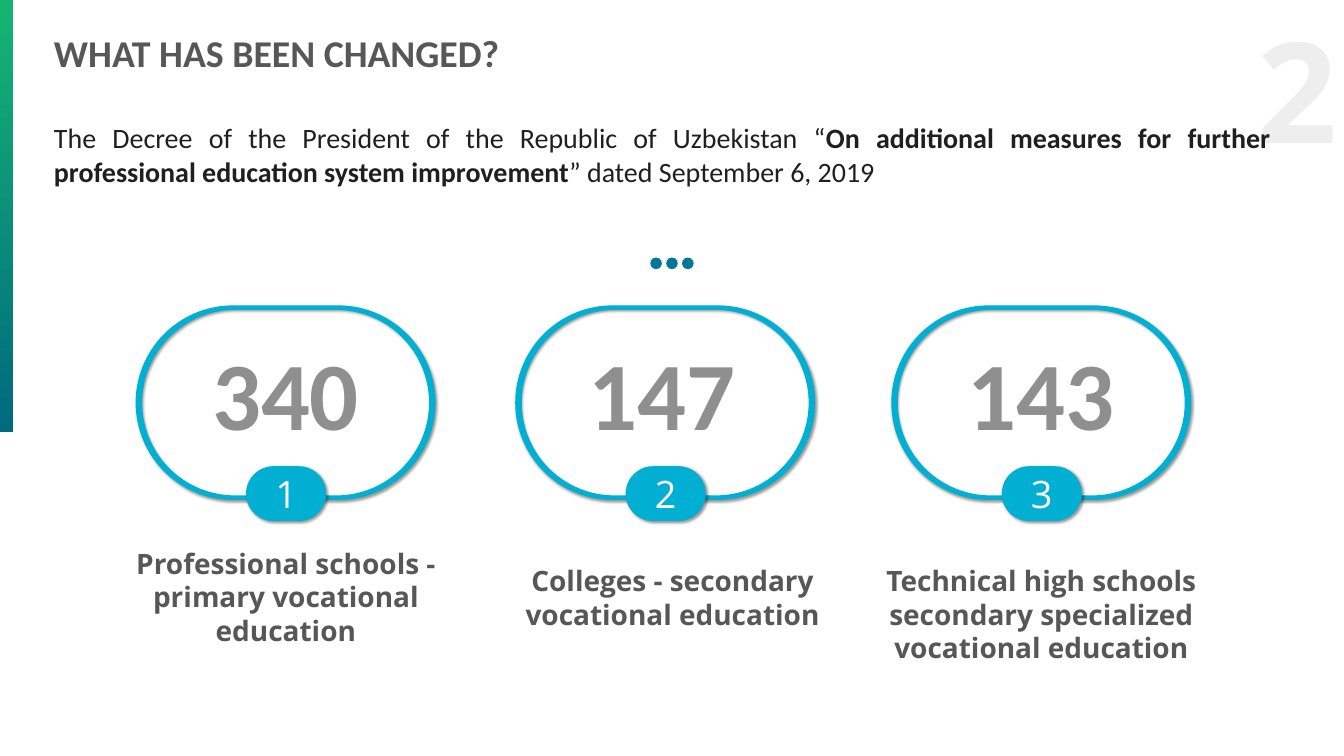
from dataclasses import dataclass

from lxml import etree
from pptx import Presentation
from pptx import util as u
from pptx.dml.color import RGBColor
from pptx.enum import shapes, text
from pptx.oxml import ns

TEAL = RGBColor(0x00, 0xAF, 0xD2)
BLUE = RGBColor(0x00, 0x77, 0x9B)
GREEN = RGBColor(0x15, 0xB4, 0x73)
DEEP_TEAL = RGBColor(0x00, 0x6A, 0x7F)
DARK = RGBColor(0x57, 0x57, 0x57)
GREY = RGBColor(0x8F, 0x8F, 0x8F)
INK = RGBColor(0x1F, 0x1F, 0x1F)
PAGE_INK = RGBColor(0x28, 0x28, 0x28)
WHITE = RGBColor(0xFF, 0xFF, 0xFF)
CALIBRI = "Calibri"
OPEN_SANS = "Open Sans"
RIM_X, RIM_Y = 0.13, 0.09
QUARTER_TURN = 5400000


@dataclass(frozen=True)
class Box:
    left: float
    top: float
    width: float
    height: float

    def lengths(self) -> list[int]:
        return [u.Inches(v) for v in (self.left, self.top, self.width, self.height)]

    def inset(self, x: float, y: float) -> "Box":
        return Box(self.left + x, self.top + y, self.width - 2 * x, self.height - 2 * y)


@dataclass(frozen=True)
class School:
    order: str
    count: str
    caption: str
    ring_left: float
    count_left: float
    caption_box: Box


SCHOOLS = [
    School("1", "340", "Professional schools - primary vocational education",
           2.69, 3.78, Box(2.34, 10.79, 6.66, 2.12)),
    School("2", "147", "Colleges - secondary vocational education",
           10.22, 11.25, Box(10.16, 11.13, 6.36, 1.45)),
    School("3", "143", "Technical high schools secondary specialized vocational education",
           17.68, 18.77, Box(17.28, 11.13, 6.75, 2.12)),
]


def write(para, words: str, *, size: float, color: RGBColor, font: str = CALIBRI,
          bold: bool = False, align=text.PP_ALIGN.CENTER):
    para.alignment = align
    para.space_before = u.Pt(0)
    span = para.add_run()
    span.text = words
    span.font.name = font
    span.font.size = u.Pt(size)
    span.font.bold = bold
    span.font.color.rgb = color
    return span


def add_text(page, box: Box, words: str, **style):
    frame = page.shapes.add_textbox(*box.lengths()).text_frame
    frame.word_wrap = True
    return write(frame.paragraphs[0], words, **style)


def place(holder, box: Box):
    holder.left, holder.top, holder.width, holder.height = box.lengths()
    frame = holder.text_frame
    frame.auto_size = text.MSO_AUTO_SIZE.NONE
    frame.vertical_anchor = text.MSO_ANCHOR.TOP
    return frame.paragraphs[0]


def paint(shape, color: RGBColor) -> None:
    shape.fill.solid()
    shape.fill.fore_color.rgb = color
    shape.line.fill.background()
    shape.shadow.inherit = False


def cast_shadow(shape) -> None:
    effects = shape._element.spPr.find(ns.qn("a:effectLst"))
    shadow = etree.SubElement(effects, ns.qn("a:outerShdw"), blurRad=str(u.Pt(4)),
                              dist=str(u.Pt(3)), dir="2700000", algn="tl", rotWithShape="0")
    tint = etree.SubElement(shadow, ns.qn("a:srgbClr"), val="000000")
    etree.SubElement(tint, ns.qn("a:alpha"), val="40000")


def add_preset(page, kind, box: Box, color: RGBColor):
    shape = page.shapes.add_shape(kind, *box.lengths())
    paint(shape, color)
    return shape


def stadium(box: Box) -> list[tuple[int, int]]:
    left, top, width, height = box.lengths()
    radius = height // 2
    right, bottom, middle = left + width, top + height, top + radius
    return [(left + radius, top), (right - radius, top), (right, middle),
            (right - radius, bottom), (left + radius, bottom), (left, middle),
            (left + radius, top)]


def add_stadium(page, *boxes: Box):
    builder = page.shapes.build_freeform(*stadium(boxes[0])[0])
    for i, box in enumerate(boxes):
        points = stadium(box)
        if i:
            builder.move_to(*points[0])
        builder.add_line_segments(points[1:], close=True)
    shape = builder.convert_to_shape()
    lines = list(shape._element.spPr.iter(ns.qn("a:lnTo")))
    for i, box in enumerate(boxes):
        radius = str(u.Inches(box.height) // 2)
        for turn, corner in zip((3, 0, 1, 2), (1, 2, 4, 5)):
            line = lines[6 * i + corner]
            arc = etree.Element(ns.qn("a:arcTo"), wR=radius, hR=radius,
                                stAng=str(turn * QUARTER_TURN), swAng=str(QUARTER_TURN))
            line.getparent().replace(line, arc)
    paint(shape, TEAL)
    cast_shadow(shape)
    return shape


def add_school(page, school: School) -> None:
    ring = Box(school.ring_left, 6.06, 5.95, 3.86)
    add_stadium(page, ring, ring.inset(RIM_X, RIM_Y))
    add_text(page, school.caption_box, school.caption, size=40, color=DARK,
             font=OPEN_SANS, bold=True)
    badge = add_stadium(page, Box(school.ring_left + 2.19, 9.25, 1.59, 1.09))
    badge.text_frame.vertical_anchor = text.MSO_ANCHOR.MIDDLE
    write(badge.text_frame.paragraphs[0], school.order, size=54, color=WHITE, font=OPEN_SANS)
    add_text(page, Box(school.count_left, 6.58, 3.77, 2.25), school.count,
             size=138, color=GREY, bold=True)


def add_side_bar(page) -> None:
    bar = add_preset(page, shapes.MSO_SHAPE.RECTANGLE, Box(0, 0, 0.26, 8.58), GREEN)
    bar.fill.gradient()
    bar.fill.gradient_angle = 270
    for stop, color in zip(bar.fill.gradient_stops, (GREEN, DEEP_TEAL)):
        stop.color.rgb = color


def add_page_number(page) -> None:
    span = add_text(page, Box(24.43, 0.03, 2.2, 3.41), "2", size=200, color=PAGE_INK,
                    font=OPEN_SANS, bold=True, align=text.PP_ALIGN.RIGHT)
    tint = span._r.rPr.find(".//" + ns.qn("a:srgbClr"))
    etree.SubElement(tint, ns.qn("a:alpha"), val="8000")


def fill_decree(holder) -> None:
    para = place(holder, Box(0.97, 2.34, 24.33, 1.45))
    props = para._p.get_or_add_pPr()
    props.set("marL", "0")
    props.set("indent", "0")
    etree.SubElement(props, ns.qn("a:buNone"))
    for words, bold in [
        ("The Decree of the President of the Republic of Uzbekistan “", False),
        ("On additional measures for further professional education system improvement", True),
        ("” dated September 6, 2019", False),
    ]:
        write(para, words, size=40, color=INK, bold=bold, align=text.PP_ALIGN.JUSTIFY)


def main() -> None:
    deck = Presentation()
    deck.slide_width, deck.slide_height = u.Inches(26.66), u.Inches(15)
    page = deck.slides.add_slide(deck.slide_layouts[1])
    write(place(page.shapes.title, Box(0.97, 0.54, 14.51, 1.09)), "WHAT HAS BEEN CHANGED?",
          size=54, color=DARK, bold=True, align=text.PP_ALIGN.LEFT)
    fill_decree(page.placeholders[1])
    add_side_bar(page)
    add_page_number(page)
    for i in range(3):
        add_preset(page, shapes.MSO_SHAPE.OVAL, Box(12.9 + 0.315 * i, 5.11, 0.23, 0.23), BLUE)
    for school in SCHOOLS:
        add_school(page, school)
    deck.save("out.pptx")


if __name__ == "__main__":
    main()
